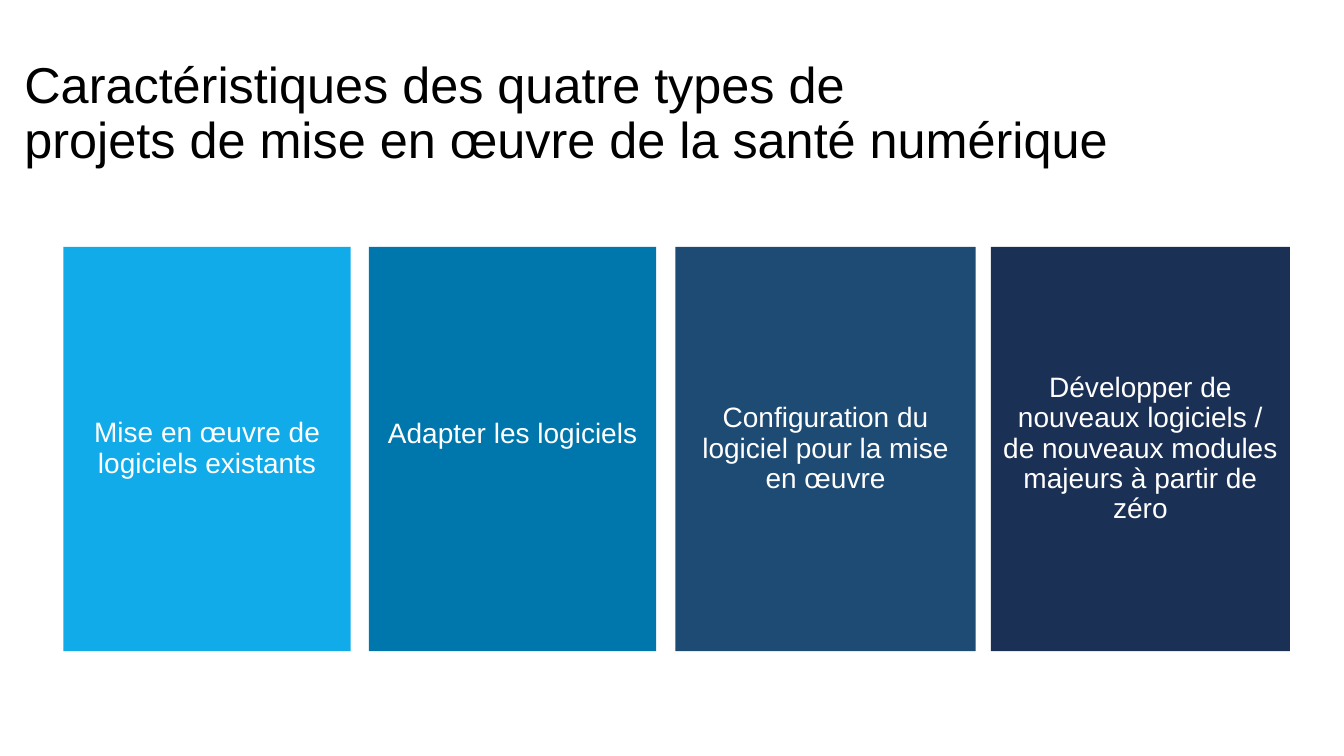
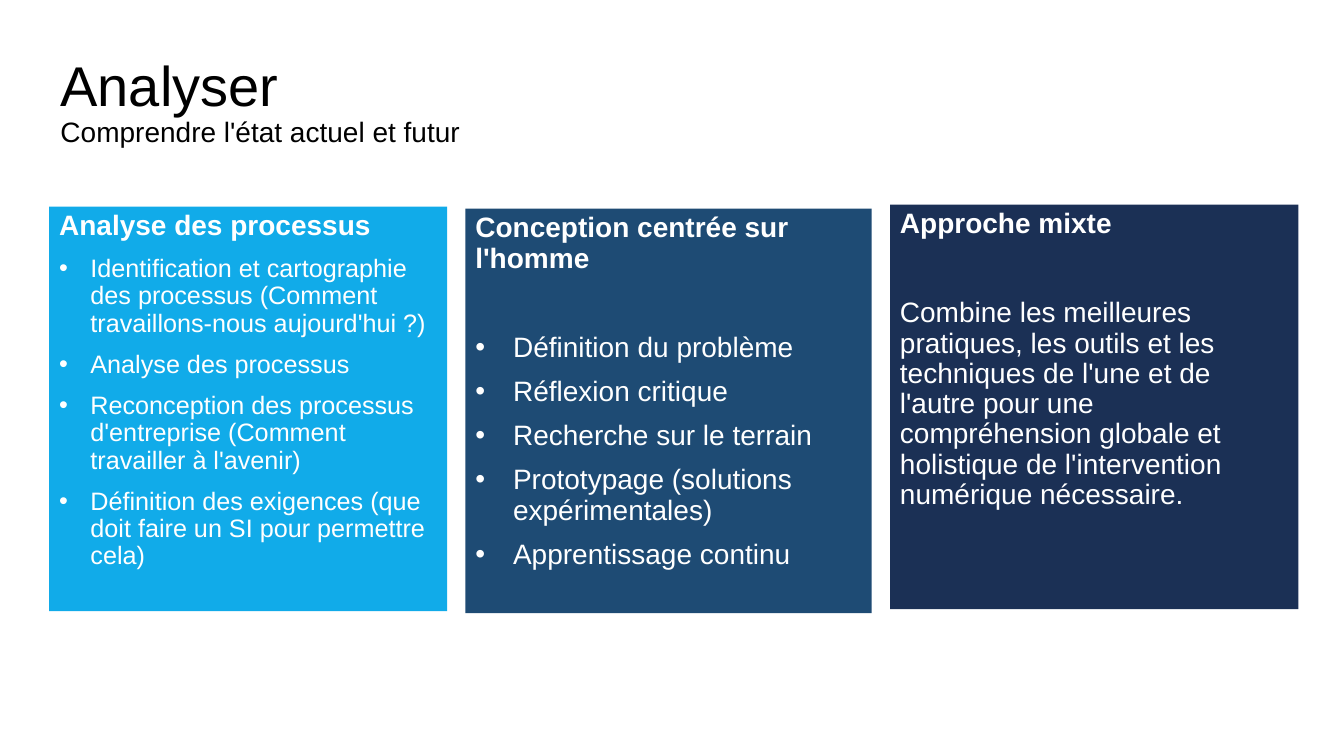
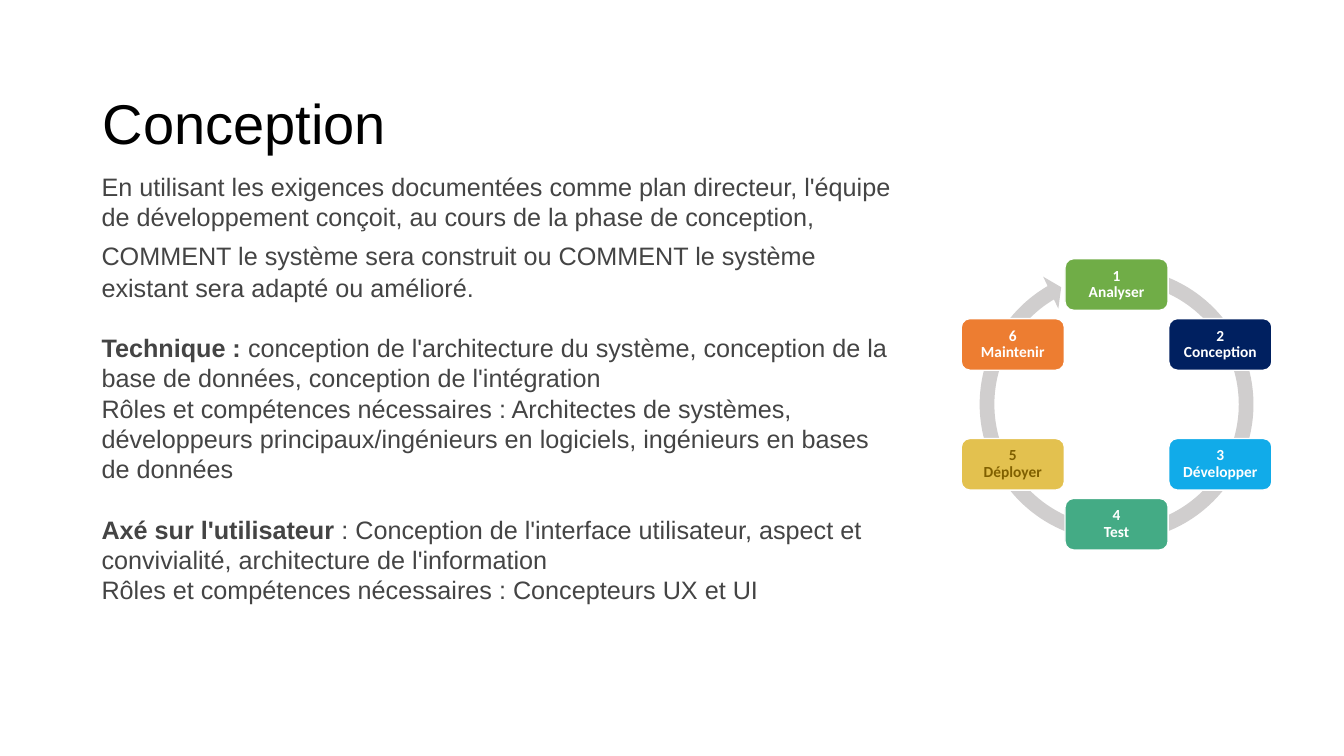
from math import cos, radians, sin

from lxml.etree import SubElement
from pptx import Presentation
from pptx.dml.color import RGBColor
from pptx.enum.shapes import MSO_SHAPE
from pptx.enum.text import MSO_ANCHOR, MSO_AUTO_SIZE, PP_ALIGN
from pptx.oxml.ns import qn
from pptx.util import Cm, Pt

SKY, SEA, STEEL, NAVY = "11ABE9", "0077AC", "1E4B74", "1B3055"
WHITE, BLACK, GREY = "FFFFFF", "000000", "444444"


def tint(code):
    return RGBColor.from_string(code)


def para(*runs, gap=10, dent=0):
    return runs, gap, dent


class Deck:
    def __init__(self):
        self.prs = Presentation()
        self.prs.slide_width = Cm(33.87)
        self.prs.slide_height = Cm(19.05)
        self.font = "Arial"
        self.slide = None

    def page(self, box, *runs):
        self.slide = self.prs.slides.add_slide(self.prs.slide_layouts[5])
        head = self.slide.shapes.title
        head.left, head.top, head.width, head.height = map(Cm, box)
        self.label(head, [para(*runs)], BLACK)

    def label(self, shape, paras, color, align=PP_ALIGN.LEFT,
              anchor=MSO_ANCHOR.MIDDLE, lead=0.9, font=None):
        frame = shape.text_frame
        frame.word_wrap = True
        frame.auto_size = MSO_AUTO_SIZE.NONE
        frame.vertical_anchor = anchor
        for i, (runs, gap, dent) in enumerate(paras):
            p = frame.add_paragraph() if i else frame.paragraphs[0]
            if dent:
                self.bullet(p, dent)
            p.alignment = align
            p.line_spacing = lead
            p.space_before = Pt(gap if i else 0)
            for text, size, bold in runs:
                self.add(p, text, size, bold, color, font or self.font)

    def add(self, p, text, size, bold, color, font):
        for i, part in enumerate(text.split("\n")):
            if i:
                p.add_line_break()
                mark = p._p.findall(qn("a:br"))[-1]
                SubElement(mark, qn("a:rPr"), sz=str(size * 100))
            if part:
                run = p.add_run()
                run.text = part
                run.font.name = font
                run.font.size = Pt(size)
                run.font.bold = bold
                run.font.color.rgb = tint(color)

    def bullet(self, p, dent):
        props = p._p.get_or_add_pPr()
        props.set("marL", str(Cm(dent)))
        props.set("indent", str(-Cm(dent)))
        SubElement(props, qn("a:buFont"), typeface="Arial")
        SubElement(props, qn("a:buChar"), char="•")

    def shape(self, kind, box, fill, line=None):
        item = self.slide.shapes.add_shape(kind, *map(Cm, box))
        item.shadow.inherit = False
        item.fill.solid()
        item.fill.fore_color.rgb = tint(fill)
        if line:
            item.line.color.rgb = tint(line)
            item.line.width = Pt(1)
        else:
            item.line.fill.background()
        return item

    def card(self, box, fill, paras, **style):
        item = self.shape(MSO_SHAPE.RECTANGLE, box, fill)
        self.label(item, paras, WHITE, **style)
        return item

    def body(self, box, paras):
        item = self.slide.shapes.add_textbox(*map(Cm, box))
        self.label(item, paras, GREY, anchor=MSO_ANCHOR.TOP, lead=1.0)

    def step(self, x, y, fill, color, text):
        wide, high = 2.6, 1.3
        box = (x - wide / 2, y - high / 2, wide, high)
        item = self.shape(MSO_SHAPE.ROUNDED_RECTANGLE, box, fill, WHITE)
        frame = item.text_frame
        frame.margin_left = frame.margin_right = Cm(0.1)
        frame.margin_top = frame.margin_bottom = Cm(0.1)
        self.label(item, [para((text, 11, True))], color,
                   align=PP_ALIGN.CENTER, font="Calibri")

    def cycle(self, x, y, reach, size, steps):
        ring = self.shape(MSO_SHAPE.CIRCULAR_ARROW,
                          (x - size / 2, y - size / 2, size, size), "D0CECE")
        for i, value in enumerate((0.05, 3.13, 143.69, 170.45, 0.06)):
            ring.adjustments[i] = value
        for i, (name, fill, color) in enumerate(steps):
            turn = radians(360 / len(steps) * i)
            self.step(x + reach * sin(turn), y - reach * cos(turn),
                      fill, color, f"{i + 1}\n{name}")


def types(deck):
    deck.page((0.36, 1.02, 29.62, 3.73),
              ("Caractéristiques des quatre types de \n"
               "projets de mise en œuvre de la santé numérique", 36, False))
    cards = [
        (1.6, 7.24, SKY, 0.13, "Mise en œuvre de logiciels existants"),
        (9.3, 7.24, SEA, 0.84, "Adapter les logiciels"),
        (17.02, 7.57, STEEL, 0.13,
         "Configuration du logiciel pour la mise en œuvre"),
        (24.97, 7.54, NAVY, 0.13,
         "Développer de nouveaux logiciels / de nouveaux modules "
         "majeurs à partir de zéro"),
    ]
    for left, wide, fill, foot, text in cards:
        item = deck.card((left, 6.22, wide, 10.19), fill,
                         [para((text, 20, False))], align=PP_ALIGN.CENTER)
        item.text_frame.margin_bottom = Cm(foot)


def study(deck):
    deck.page((1.27, 0.43, 28.02, 4.34), ("Analyser \n", 40, False),
              ("Comprendre l'état actuel et futur", 20, False))
    cards = [
        (1.24, 5.21, 10.03, SKY, "Analyse des processus", 18, 0.79, 10, [
            "Identification et cartographie des processus "
            "(Comment travaillons-nous aujourd'hui ?)",
            "Analyse des processus",
            "Reconception des processus d'entreprise "
            "(Comment travailler à l'avenir)",
            "Définition des exigences (que doit faire un SI "
            "pour permettre cela)"]),
        (11.73, 5.26, 10.24, STEEL, "Conception centrée sur l'homme",
         20, 0.95, 42, [
             "Définition du problème",
             "Réflexion critique",
             "Recherche sur le terrain",
             "Prototypage (solutions expérimentales)",
             "Apprentissage continu"]),
        (22.43, 5.16, 10.29, NAVY, "Approche mixte", 20, 0, 42, [
            "Combine les meilleures pratiques, les outils et les techniques "
            "de l'une et de l'autre pour une compréhension globale et "
            "holistique de l'intervention numérique nécessaire."]),
    ]
    for left, top, wide, fill, head, size, dent, gap, items in cards:
        paras = [para((head, 20, True))]
        for i, text in enumerate(items):
            paras.append(para((text, size, False), dent=dent,
                              gap=10 if i else gap))
        deck.card((left, top, wide, 10.19), fill, paras,
                  anchor=MSO_ANCHOR.TOP)


def design(deck):
    deck.page((2.34, 1.02, 28.02, 4.34), ("Conception", 40, False))
    deck.body((2.31, 4.19, 20.45, 13.59), [
        para(("En utilisant les exigences documentées comme plan directeur, "
              "l'équipe de développement conçoit, au cours de la phase de "
              "conception, COMMENT le système sera construit ou COMMENT le "
              "système", 18, False),
             (" ", 24, False),
             ("existant sera adapté ou amélioré.", 18, False)),
        para(("Technique : ", 18, True),
             ("conception de l'architecture du système, conception de la "
              "base de données, conception de l'intégration", 18, False),
             gap=21.6),
        para(("Rôles et compétences nécessaires : Architectes de systèmes, "
              "développeurs principaux/ingénieurs en logiciels, ingénieurs "
              "en bases de données", 18, False), gap=0),
        para(("Axé sur l'utilisateur ", 18, True),
             (": Conception de l'interface utilisateur, aspect et "
              "convivialité, architecture de l'information", 18, False),
             gap=21.6),
        para(("Rôles et compétences nécessaires : Concepteurs UX et UI",
              18, False), gap=0),
    ])
    deck.cycle(28.14, 10.19, 3.02, 7.42, [
        ("Analyser", "70AD47", WHITE),
        ("Conception", "002060", WHITE),
        ("Développer", SKY, WHITE),
        ("Test", "44AB85", WHITE),
        ("Déployer", "E3C14F", "806000"),
        ("Maintenir", "ED7D31", WHITE),
    ])


def main():
    deck = Deck()
    types(deck)
    study(deck)
    design(deck)
    deck.prs.save("out.pptx")


if __name__ == "__main__":
    main()
